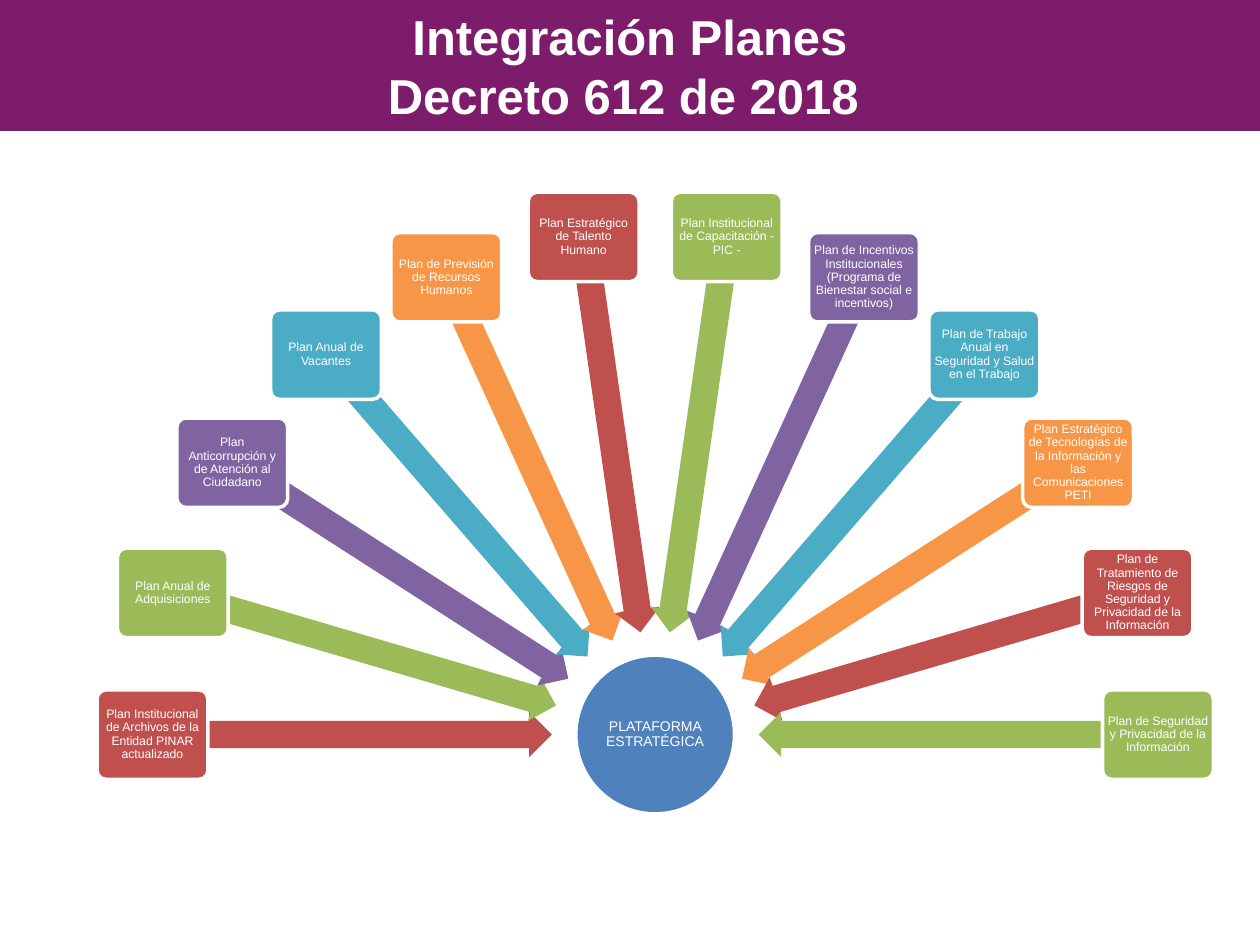
import math
from dataclasses import dataclass
from itertools import cycle

from pptx import Presentation
from pptx import util as u
from pptx.dml.color import RGBColor
from pptx.enum import shapes, text

PX = 9144  # EMU per px, 100 px to the inch


@dataclass(frozen=True)
class Theme:
    font: str = "Arial"
    white: str = "FFFFFF"
    band: str = "7D1C6A"
    hub: str = "4F81BD"
    rays: tuple = ("C0504D", "9BBB59", "8064A2", "4BACC6", "F79646")
    head: int = 28
    core: int = 8
    card: int = 7
    edge: int = 2


class Deck:
    def __init__(self, theme):
        self.theme = theme
        self.prs = Presentation()
        self.prs.slide_width, self.prs.slide_height = 1000 * PX, 750 * PX
        self.slide = self.prs.slides.add_slide(self.prs.slide_layouts[6])

    def shape(self, kind, mid, size, fill, edge=0, adj=(), turn=0):
        """Add a filled preset shape centred on a point."""
        left, top = (round((m - s / 2) * PX) for m, s in zip(mid, size))
        item = self.slide.shapes.add_shape(
            kind, left, top, size[0] * PX, size[1] * PX)
        item.shadow.inherit = False
        item.rotation = turn
        for i, value in enumerate(adj):
            item.adjustments[i] = value
        item.fill.solid()
        item.fill.fore_color.rgb = RGBColor.from_string(fill)
        if edge:
            item.line.color.rgb = RGBColor.from_string(self.theme.white)
            item.line.width = u.Pt(edge)
        else:
            item.line.fill.background()
        return item

    def label(self, item, lines, size, bold=False, lead=1.0, inset=None):
        """Put centred white text in a shape."""
        frame = item.text_frame
        form = {"word_wrap": True, "vertical_anchor": text.MSO_ANCHOR.MIDDLE}
        if inset is not None:
            for side in ("left", "right", "top", "bottom"):
                form["margin_" + side] = inset * PX
        for key, value in form.items():
            setattr(frame, key, value)
        for i, line in enumerate(lines):
            para = frame.add_paragraph() if i else frame.paragraphs[0]
            para.alignment = text.PP_ALIGN.CENTER
            para.line_spacing = lead
            run = para.add_run()
            run.text = line
            style = {"name": self.theme.font, "size": u.Pt(size), "bold": bold}
            for key, value in style.items():
                setattr(run.font, key, value)
            run.font.color.rgb = RGBColor.from_string(self.theme.white)

    def banner(self, lines):
        item = self.shape(shapes.MSO_SHAPE.RECTANGLE, (500, 52), (1000, 104),
                          self.theme.band)
        self.label(item, lines, self.theme.head, bold=True)

    def hub(self, mid, name):
        item = self.shape(shapes.MSO_SHAPE.OVAL, mid, (126, 126),
                          self.theme.hub, self.theme.edge)
        self.label(item, [name], self.theme.core, lead=0.9, inset=1)

    def arrow(self, mid, turn, fill):
        self.shape(shapes.MSO_SHAPE.LEFT_ARROW, mid, (318, 36), fill,
                   adj=(0.6, 0.5), turn=turn)

    def card(self, mid, name, fill):
        item = self.shape(shapes.MSO_SHAPE.ROUNDED_RECTANGLE, mid, (88, 71),
                          fill, self.theme.edge, adj=(0.1,))
        self.label(item, [name], self.theme.card, lead=0.9, inset=1)


HUB = (520, 583)
REACH, FAR = 241, 399  # hub to arrow centre, hub to card centre
PLANS = [
    "Plan Institucional de Archivos de la Entidad PINAR actualizado",
    "Plan Anual de Adquisiciones",
    "Plan Anticorrupción y de Atención al Ciudadano",
    "Plan Anual de Vacantes",
    "Plan de Previsión de Recursos Humanos",
    "Plan Estratégico de Talento Humano",
    "Plan Institucional de Capacitación - PIC -",
    "Plan de Incentivos Institucionales (Programa de Bienestar social e "
    "incentivos)",
    "Plan de Trabajo Anual en Seguridad y Salud en el Trabajo",
    "Plan Estratégico de Tecnologías de la Información y las "
    "Comunicaciones PETI",
    "Plan de Tratamiento de Riesgos de Seguridad y Privacidad de la "
    "Información",
    "Plan de Seguridad y Privacidad de la Información",
]


def polar(reach, turn):
    angle = math.radians(turn)
    return HUB[0] + reach * math.cos(angle), HUB[1] + reach * math.sin(angle)


def main():
    deck = Deck(Theme())

    # Hub of the fan
    deck.hub(HUB, "PLATAFORMA ESTRATÉGICA")

    # Plans spread evenly over a half circle, left to right
    step = 180 / (len(PLANS) - 1)
    for i, (plan, fill) in enumerate(zip(PLANS, cycle(deck.theme.rays))):
        turn = 180 + i * step
        deck.arrow(polar(REACH, turn), turn, fill)
        deck.card(polar(FAR, turn), plan, fill)

    # Title band
    deck.banner(["Integración Planes", "Decreto 612 de 2018 "])

    deck.prs.save("out.pptx")


if __name__ == "__main__":
    main()
